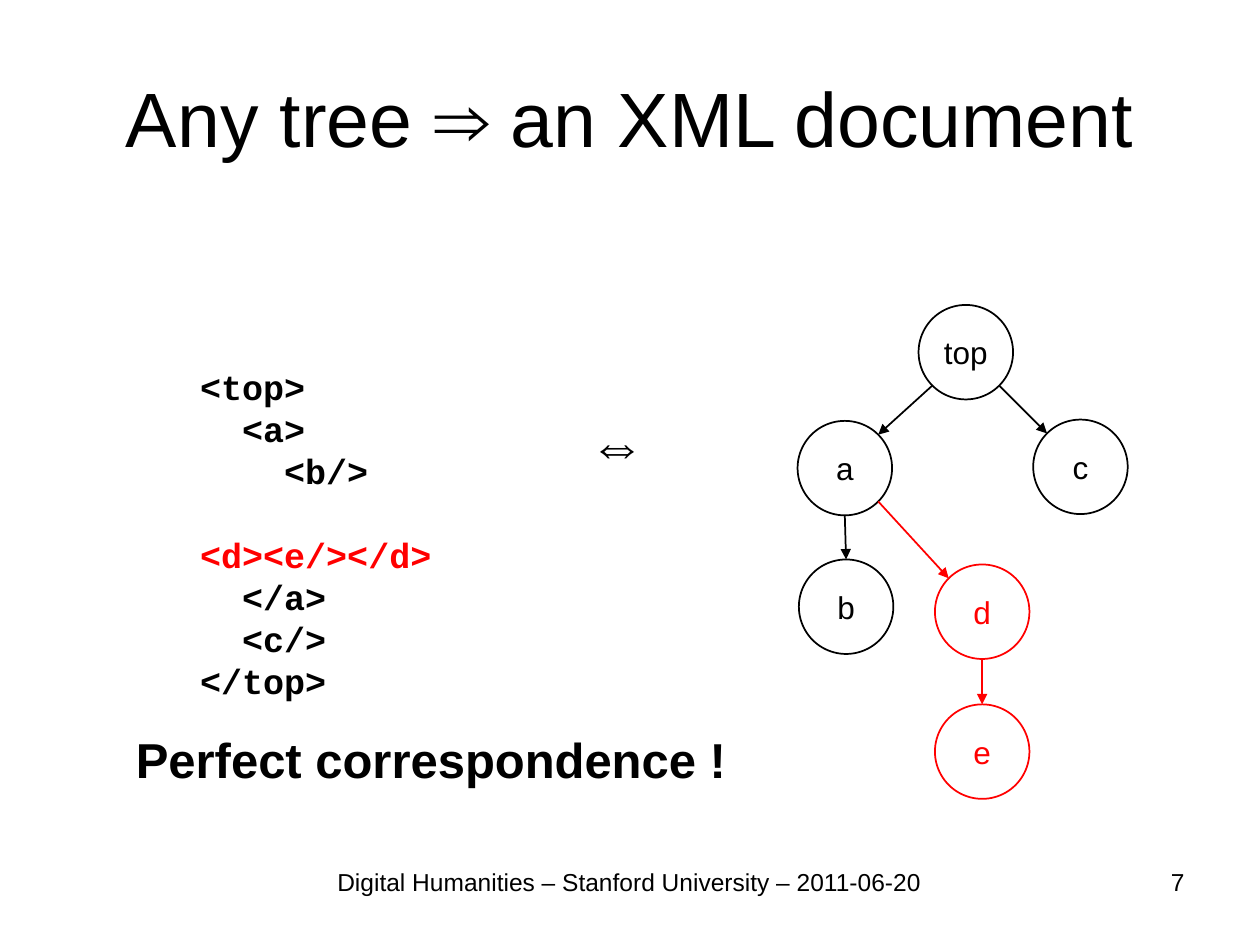
"""Build a slide that pairs an XML document with its tree."""
import dataclasses
import math

import lxml.etree
import pptx
import pptx.dml.color
import pptx.enum.shapes
import pptx.enum.text
import pptx.oxml.ns
import pptx.util

Inches = pptx.util.Inches
Pt = pptx.util.Pt
Align = pptx.enum.text.PP_ALIGN
Anchor = pptx.enum.text.MSO_ANCHOR


@dataclasses.dataclass(frozen=True)
class Theme:
    ink: str = "000000"
    mark: str = "FF0000"
    sans: str = "Arial"
    mono: str = "Courier New"
    title: int = 44
    sign: int = 32
    claim: int = 28
    code: int = 20
    node: int = 18
    foot: int = 14
    line: int = 1
    size: float = 0.75
    step: int = 24


THEME = Theme()

NODES = {
    "top": (7.29, 2.42, THEME.ink),
    "a": (6.33, 3.34, THEME.ink),
    "b": (6.34, 4.44, THEME.ink),
    "c": (8.2, 3.33, THEME.ink),
    "d": (7.42, 4.48, THEME.mark),
    "e": (7.42, 5.59, THEME.mark),
}
EDGES = [("top", "a"), ("top", "c"), ("a", "b"), ("a", "d"), ("d", "e")]

CODE = [
    ("<top>", 0, 0, THEME.ink),
    ("<a>", 1, 0, THEME.ink),
    ("<b/>", 2, 0, THEME.ink),
    ("<d><e/></d>", 0, 1, THEME.mark),
    ("</a>", 1, 0, THEME.ink),
    ("<c/>", 1, 0, THEME.ink),
    ("</top>", 0, 0, THEME.ink),
]


def rgb(color):
    return pptx.dml.color.RGBColor.from_string(color)


def add_run(para, text, size, color=THEME.ink, face=THEME.sans, bold=False):
    run = para.add_run()
    run.text = text
    run.font.name = face
    run.font.size = Pt(size)
    run.font.bold = bold
    run.font.color.rgb = rgb(color)


def add_box(slide, *place):
    box = slide.shapes.add_textbox(*map(Inches, place))
    box.text_frame.word_wrap = True
    return box.text_frame


def add_label(slide, place, text, size, align=Align.LEFT, bold=False):
    para = add_box(slide, *place).paragraphs[0]
    para.alignment = align
    add_run(para, text, size, bold=bold)


def add_title(slide, text):
    title = slide.shapes.title
    title.left, title.top = Inches(0.5), Inches(0.3)
    title.width, title.height = Inches(9), Inches(1.25)
    title.text_frame.vertical_anchor = Anchor.MIDDLE
    para = title.text_frame.paragraphs[0]
    para.alignment = Align.CENTER
    add_run(para, text, THEME.title)


def add_code(slide):
    frame = add_box(slide, 1.49, 2.85, 2.7, 2.77)
    for row, (text, depth, gap, color) in enumerate(CODE):
        para = frame.add_paragraph() if row else frame.paragraphs[0]
        para.line_spacing = Pt(THEME.step)
        para.space_before = Pt(gap * THEME.step)
        props = para._p.get_or_add_pPr()
        props.set("marL", str(Pt(depth * THEME.step)))
        props.set("indent", "0")
        add_run(para, text, THEME.code, color, THEME.mono, True)


def add_node(slide, name):
    left, top, color = NODES[name]
    node = slide.shapes.add_shape(
        pptx.enum.shapes.MSO_SHAPE.OVAL,
        *map(Inches, (left, top, THEME.size, THEME.size)))
    node.shadow.inherit = False
    node.fill.background()
    node.line.color.rgb = rgb(color)
    node.line.width = Pt(THEME.line)
    frame = node.text_frame
    frame.word_wrap = False
    frame.vertical_anchor = Anchor.MIDDLE
    para = frame.paragraphs[0]
    para.alignment = Align.CENTER
    add_run(para, name, THEME.node, color)


def add_edge(slide, start, end):
    half = THEME.size / 2
    x1, y1 = (v + half for v in NODES[start][:2])
    x2, y2, color = NODES[end]
    x2, y2 = x2 + half, y2 + half
    if abs(x2 - x1) < 0.1:
        dx, dy = 0, half
    else:
        dy = half * math.sqrt(0.5)
        dx = math.copysign(dy, x2 - x1)
    edge = slide.shapes.add_connector(
        pptx.enum.shapes.MSO_CONNECTOR.STRAIGHT,
        *map(Inches, (x1 + dx, y1 + dy, x2 - dx, y2 - dy)))
    edge.line.color.rgb = rgb(color)
    edge.line.width = Pt(THEME.line)
    qn = pptx.oxml.ns.qn
    tail = lxml.etree.SubElement(edge.line._get_or_add_ln(), qn("a:tailEnd"))
    tail.set("type", "triangle")
    lxml.etree.SubElement(edge._element.spPr, qn("a:effectLst"))


def main():
    deck = pptx.Presentation()
    deck.slide_width, deck.slide_height = Inches(10), Inches(7.5)
    slide = deck.slides.add_slide(deck.slide_layouts[5])
    add_title(slide, "Any tree ⇒ an XML document")
    add_code(slide)
    add_label(slide, (4.58, 3.2, 0.66, 0.63), "⇔", THEME.sign)
    for name in NODES:
        add_node(slide, name)
    for start, end in EDGES:
        add_edge(slide, start, end)
    add_label(slide, (0.98, 5.74, 5.1, 0.57), "Perfect correspondence !",
              THEME.claim, bold=True)
    add_label(slide, (2.33, 6.83, 5.33, 0.52),
              "Digital Humanities – Stanford University – 2011-06-20",
              THEME.foot, Align.CENTER)
    add_label(slide, (7.17, 6.83, 2.33, 0.52), "7", THEME.foot, Align.RIGHT)
    deck.save("out.pptx")


if __name__ == "__main__":
    main()
